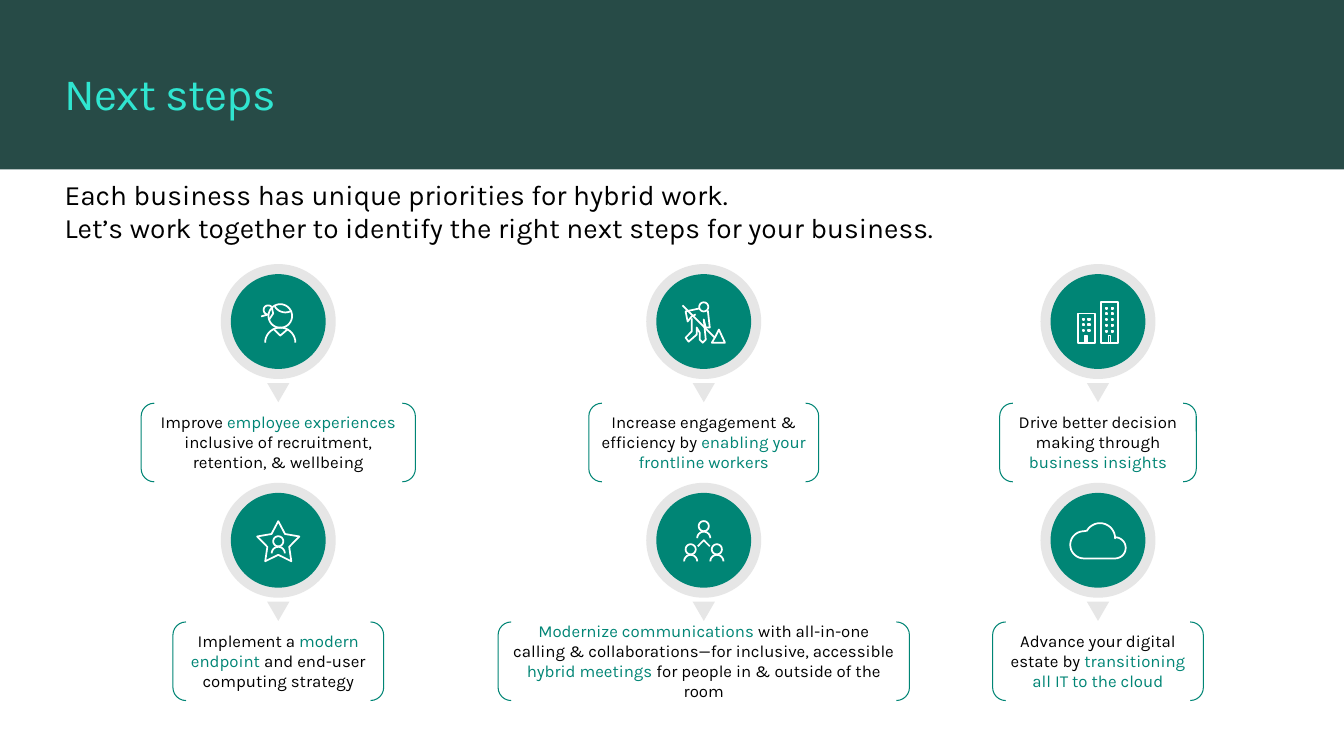
from math import cos, sin, radians

from pptx import Presentation
from pptx.dml.color import RGBColor
from pptx.enum.shapes import MSO_SHAPE as Preset
from pptx.enum.text import MSO_ANCHOR as Anchor, MSO_AUTO_SIZE as AutoSize, PP_ALIGN as Align
from pptx.util import Inches, Pt


class Theme:
    band, mint, teal = "274B47", "30E5D0", "008575"
    ring, ink, white = "E6E6E6", "000000", "FFFFFF"
    font = "Karla"
    title_size, intro_size, label_size = 32, 20, 12
    bracket_line, icon_line = 0.75, 1.25


# Content: rows of steps as (icon, label width, bracket width, [(text, colour)])
TITLE = "Next steps"
INTRO = [
    "Each business has unique priorities for hybrid work.",
    "Let’s work together to identify the right next steps for your business.",
]
STEP_ROWS = [
    [("person", 2.4, 2.72, [
        ("Improve ", Theme.ink), ("employee experiences", Theme.teal),
        (" inclusive of recruitment, retention, & wellbeing", Theme.ink)]),
     ("worker", 2.23, 2.28, [
         ("Increase engagement & efficiency by ", Theme.ink),
         ("enabling your frontline workers", Theme.teal)]),
     ("buildings", 1.82, 1.95, [
         ("Drive better decision making through ", Theme.ink),
         ("business insights", Theme.teal)])],
    [("star", 1.84, 2.09, [
        ("Implement a ", Theme.ink), ("modern endpoint", Theme.teal),
        (" and end-user computing strategy", Theme.ink)]),
     ("team", 3.82, 4.08, [
         ("Modernize communications", Theme.teal),
         (" with all-in-one calling & collaborations—for inclusive, accessible ", Theme.ink),
         ("hybrid meetings", Theme.teal),
         (" for people in & outside of the room", Theme.ink)]),
     ("cloud", 1.84, 2.09, [
         ("Advance your digital estate by ", Theme.ink),
         ("transitioning all IT to the cloud", Theme.teal)])],
]

# Grid in inches: column centres, first row of circle centres and row pitch
WIDTH, HEIGHT, MARGIN = 13.33, 7.5, 0.64
COLUMN_CENTRES = (2.76, 6.98, 10.89)
FIRST_ROW, ROW_PITCH = 3.19, 2.17


# Icon strokes, in hundredths of an inch from the circle centre
def arc(x, y, radius, start=0, end=360, step=10):
    return [(x + radius * cos(radians(a)), y + radius * sin(radians(a)))
            for a in range(start, end + 1, step)]


def box(left, top, width, height):
    right, bottom = left + width, top + height
    return [(left, top), (right, top), (right, bottom), (left, bottom), (left, top)]


def bust(x, y):
    return [arc(x, y, 5), arc(x, y + 12, 6.5, 180)]


def building(left, height, window_rows, ground=21, width=17):
    """Outline, door and two columns of windows, standing on the ground."""
    top = ground - height
    panes = [box(left + column, top + 5 + 5.7 * row, 1.3, 1.3)
             for column in (5, 10.5) for row in range(window_rows)]
    return [box(left, top, width, height), box(left + 7.5, ground - 7, 2, 7), *panes]


def star(y, outer, inner):
    tips, notches = arc(0, y, outer, -90, 270, 72), arc(0, y, inner, -54, 306, 72)
    return [point for pair in zip(tips, notches) for point in pair][:-1]


def cloud():
    outline = arc(-14, 4.5, 13.5, 90, 270) + arc(2, -2, 15, 210) + arc(17, 7.5, 10.5, 270, 450)
    return outline + outline[:1]


ICONS = {
    "person": [
        arc(2, -5.5, 11.7), arc(2, 21, 15, 180), [(-4, 8), (2, 14), (9, 8)],
        arc(7, -21, 12, 60, 150),
        [(-17, -5)] + arc(-10, -11.5, 4.5, 90, 320) + [(-5, -8), (-9, -2)]],
    "worker": [
        arc(0, -14.5, 4.5),
        [(4, -11), (6, 6), (2, 6), (0, -2), (2, 18), (-1, 21), (-4, 18), (-4, 11),
         (-7, 6), (-7, 13), (-15, 20), (-18, 16), (-12, 10), (-12, -3)],
        [(-4, -13), (-18, -10), (-16, 0), (-12, -5), (-8, -7)],
        [(-21, -16), (11, 16), (8, 21), (21, 21), (15, 8), (11, 16)]],
    "buildings": building(3, 40, 5) + building(-20, 29, 3),
    "star": [star(3, 22, 11.4), *bust(0, 1)],
    "team": [*bust(0, -14), *bust(-13, 9), *bust(13, 9), [(-6, 6), (0, 0), (6, 6)]],
    "cloud": [cloud()],
}


# Drawing helpers
def paint(shape, fill=None, line=None, weight=0):
    shape.shadow.inherit = False
    if fill:
        shape.fill.solid()
        shape.fill.fore_color.rgb = RGBColor.from_string(fill)
    else:
        shape.fill.background()
    if line:
        shape.line.color.rgb = RGBColor.from_string(line)
        shape.line.width = Pt(weight)
    else:
        shape.line.fill.background()


def add_preset(slide, preset, x, y, width, height, **colours):
    """Add a preset shape centred on x with its top at y."""
    shape = slide.shapes.add_shape(
        preset, *(Inches(v) for v in (x - width / 2, y, width, height)))
    paint(shape, **colours)
    return shape


def add_text(slide, bounds, paragraphs, size, align=Align.LEFT, anchor=Anchor.TOP, spacing=None):
    frame = slide.shapes.add_textbox(*(Inches(v) for v in bounds)).text_frame
    settings = {"word_wrap": True, "auto_size": AutoSize.SHAPE_TO_FIT_TEXT,
                "vertical_anchor": anchor}
    settings |= {f"margin_{side}": 0 for side in ("left", "right", "top", "bottom")}
    for name, value in settings.items():
        setattr(frame, name, value)
    for index, runs in enumerate(paragraphs):
        paragraph = frame.add_paragraph() if index else frame.paragraphs[0]
        paragraph.alignment = align
        for text, colour in runs:
            run = paragraph.add_run()
            run.text = text
            for name, value in {"name": Theme.font, "size": Pt(size)}.items():
                setattr(run.font, name, value)
            run.font.color.rgb = RGBColor.from_string(colour)
            if spacing:
                run.font._element.set("spc", str(spacing))


def add_icon(slide, strokes, x, y):
    unit = Inches(0.01) / 100
    scaled = [[(Inches(x) / unit + px * 100, Inches(y) / unit + py * 100) for px, py in stroke]
              for stroke in strokes]
    builder = slide.shapes.build_freeform(*scaled[0][0], scale=unit)
    for index, (start, *rest) in enumerate(scaled):
        if index:
            builder.move_to(*start)
        builder.add_line_segments(rest, close=False)
    paint(builder.convert_to_shape(), line=Theme.white, weight=Theme.icon_line)


def add_step(slide, x, y, icon, label_width, bracket_width, runs):
    add_preset(slide, Preset.DOUBLE_BRACKET, x, y + 0.81, bracket_width, 0.78,
               line=Theme.teal, weight=Theme.bracket_line)
    add_text(slide, (x - label_width / 2, y + 0.89, label_width, 0.61), [runs],
             Theme.label_size, Align.CENTER, Anchor.MIDDLE)
    for diameter, colour in ((1.14, Theme.ring), (0.94, Theme.teal)):
        add_preset(slide, Preset.OVAL, x, y - diameter / 2, diameter, diameter, fill=colour)
    pointer = add_preset(slide, Preset.ISOSCELES_TRIANGLE, x, y + 0.61, 0.22, 0.19,
                         fill=Theme.ring)
    pointer.rotation = 180
    add_icon(slide, ICONS[icon], x, y)


def main():
    presentation = Presentation()
    presentation.slide_width, presentation.slide_height = Inches(WIDTH), Inches(HEIGHT)
    slide = presentation.slides.add_slide(presentation.slide_layouts[6])

    # Header band, title and introduction
    add_preset(slide, Preset.RECTANGLE, WIDTH / 2, 0, WIDTH, 1.68, fill=Theme.band)
    add_text(slide, (MARGIN, 0.65, 3.76, 0.54), [[(TITLE, Theme.mint)]],
             Theme.title_size, spacing=-50)
    add_text(slide, (MARGIN, 1.76, 9.12, 0.67), [[(line, Theme.ink)] for line in INTRO],
             Theme.intro_size)

    # Two rows of three steps
    for row, steps in enumerate(STEP_ROWS):
        for x, step in zip(COLUMN_CENTRES, steps):
            add_step(slide, x, FIRST_ROW + row * ROW_PITCH, *step)
    presentation.save("out.pptx")


if __name__ == "__main__":
    main()
